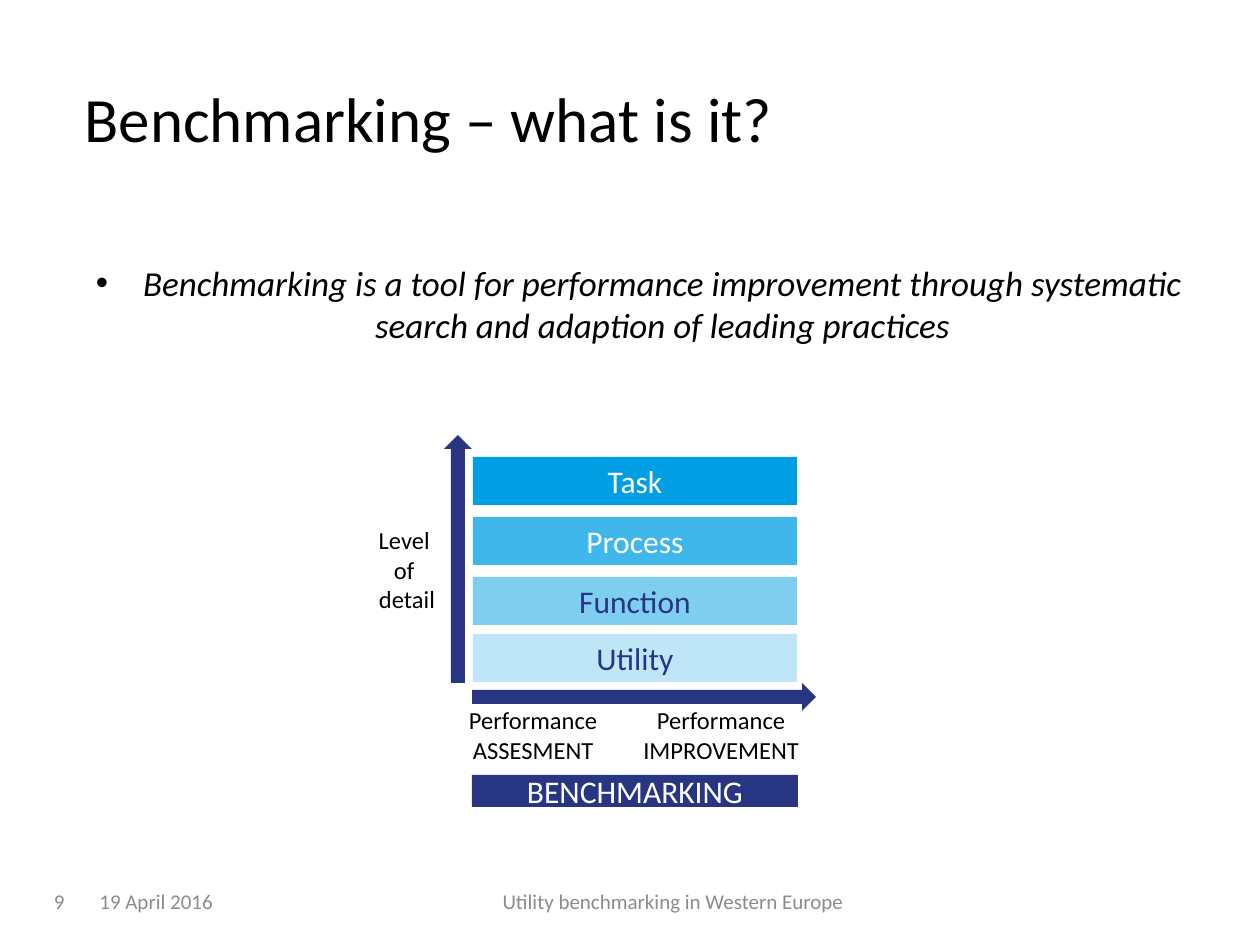
"""Build the slide that explains what benchmarking is."""
import pptx
import pptx.dml.color
import pptx.enum.shapes
import pptx.enum.text
import pptx.oxml.ns
import pptx.util
from lxml import etree

PIXEL = 914400 / 126
COLORS = {
    "black": "000000",
    "white": "FFFFFF",
    "gray": "8C8C8C",
    "navy": "283583",
    "sky": "009FE3",
}
ALIGN = pptx.enum.text.PP_ALIGN
ANCHOR = pptx.enum.text.MSO_ANCHOR
SHAPE = pptx.enum.shapes.MSO_SHAPE


def px(*lengths):
    """Turn pixel lengths into a list of EMU lengths."""
    return [pptx.util.Emu(round(length * PIXEL)) for length in lengths]


def rgb(name):
    """Look up a named colour."""
    return pptx.dml.color.RGBColor.from_string(COLORS[name])


def write_text(frame, text, size=14, color="black", align=ALIGN.CENTER,
               anchor=ANCHOR.TOP, italic=False, font="Calibri"):
    """Fill a text frame, one paragraph for each line of text."""
    frame.word_wrap = True
    frame.auto_size = pptx.enum.text.MSO_AUTO_SIZE.NONE
    frame.vertical_anchor = anchor
    frame.text = text
    for paragraph in frame.paragraphs:
        paragraph.alignment = align
        paragraph.font.name = font
        paragraph.font.size = pptx.util.Pt(size)
        paragraph.font.italic = italic
        paragraph.font.color.rgb = rgb(color)


class SlideBuilder:
    """Hold the current slide and add styled elements to it."""

    def __init__(self, presentation):
        """Add a slide with a title and a body."""
        self.slide = presentation.slides.add_slide(presentation.slide_layouts[1])
        self.shapes = self.slide.shapes

    def place(self, shape, box):
        """Move a placeholder to a pixel box."""
        shape.left, shape.top, shape.width, shape.height = px(*box)

    def title(self, text, box):
        """Write the slide title."""
        shape = self.shapes.title
        self.place(shape, box)
        write_text(shape.text_frame, text, size=36, align=ALIGN.LEFT, anchor=ANCHOR.MIDDLE)

    def statement(self, text, box, top_margin, indent):
        """Write an unbulleted statement with a hanging indent in the body."""
        shape = self.slide.placeholders[1]
        self.place(shape, box)
        frame = shape.text_frame
        frame.margin_top, hanging = px(top_margin, indent)
        paragraph = frame.paragraphs[0]
        paragraph.line_spacing = 1.25
        paragraph.space_before = pptx.util.Pt(0)
        properties = paragraph._p.get_or_add_pPr()
        properties.set("marL", str(hanging))
        properties.set("indent", str(-hanging))
        etree.SubElement(properties, pptx.oxml.ns.qn("a:buNone"))
        write_text(frame, text, size=20, italic=True)

    def label(self, text, box, **style):
        """Add a text box."""
        shape = self.shapes.add_textbox(*px(*box))
        write_text(shape.text_frame, text, **style)

    def block(self, kind, box, fill="navy", opacity=100, text="", color="white", parent=None):
        """Add a filled shape to the slide or to a parent group."""
        shapes = parent.shapes if parent else self.shapes
        shape = shapes.add_shape(kind, *px(*box))
        shape.shadow.inherit = False
        shape.line.fill.background()
        shape.fill.solid()
        shape.fill.fore_color.rgb = rgb(fill)
        if opacity < 100:
            tint = shape.fill._xPr.find(".//" + pptx.oxml.ns.qn("a:srgbClr"))
            etree.SubElement(tint, pptx.oxml.ns.qn("a:alpha"), val=str(opacity * 1000))
        if text:
            write_text(shape.text_frame, text, size=18, color=color, anchor=ANCHOR.MIDDLE)


def main():
    """Build and save the presentation."""
    presentation = pptx.Presentation()
    presentation.slide_width, presentation.slide_height = px(1260, 945)
    builder = SlideBuilder(presentation)

    builder.title("Benchmarking – what is it?", (72, 38, 1134, 158))
    builder.statement(
        "Benchmarking is a tool for performance improvement through systematic "
        "search and adaption of leading practices",
        (72, 195, 1134, 624), top_margin=66, indent=48)

    for text, left, width, align in (
        ("19 April 2016", 87, 294, ALIGN.LEFT),
        ("Utility benchmarking in Western Europe", 401, 544, ALIGN.CENTER),
        ("9", 14, 63, ALIGN.RIGHT),
    ):
        builder.label(text, (left, 876, width, 50), size=12, color="gray",
                      align=align, anchor=ANCHOR.MIDDLE)

    diagram = builder.shapes.add_group_shape()
    builder.block(SHAPE.UP_ARROW, (444, 435, 28, 248), parent=diagram)
    builder.block(SHAPE.RIGHT_ARROW, (472, 683, 344, 28), parent=diagram)
    for text, top, opacity, color in (
        ("Task", 457, 100, "white"),
        ("Process", 517, 75, "white"),
        ("Function", 577, 50, "navy"),
        ("Utility", 634, 25, "navy"),
    ):
        builder.block(SHAPE.RECTANGLE, (473, top, 324, 48), fill="sky", opacity=opacity,
                      text=text, color=color, parent=diagram)

    builder.label("Performance \nASSESMENT ", (423, 699, 226, 72))
    builder.label("Performance \nIMPROVEMENT ", (611, 699, 226, 72))
    builder.block(SHAPE.RECTANGLE, (472, 775, 326, 32), text="BENCHMARKING")
    builder.label("Level \nof \ndetail", (294, 519, 226, 102))

    presentation.save("out.pptx")


if __name__ == "__main__":
    main()
